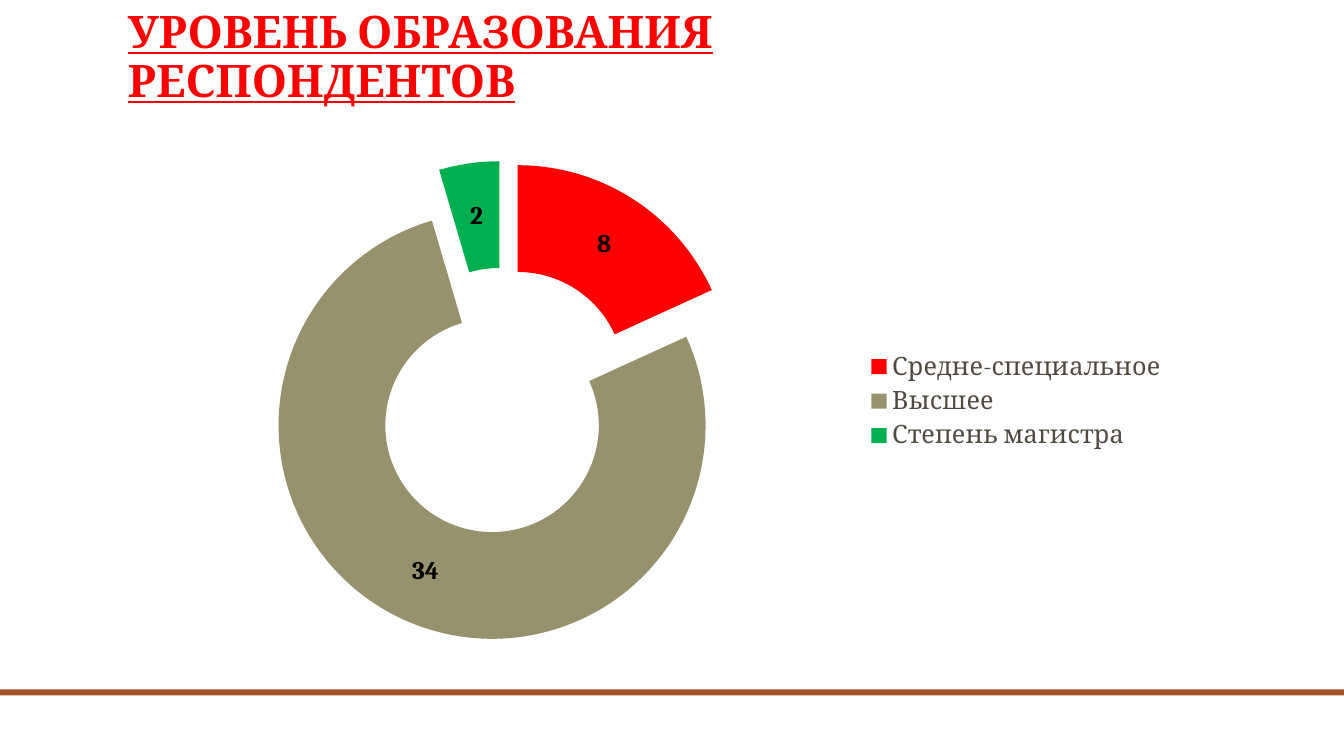
from dataclasses import dataclass

import pptx
import pptx.chart.data
import pptx.dml.color
import pptx.enum.chart
import pptx.enum.shapes
import pptx.enum.text
import pptx.util

Inches = pptx.util.Inches
Pt = pptx.util.Pt
FACE = "Cambria"


@dataclass
class Level:
    name: str
    count: int
    color: str


LEVELS = [
    Level("Средне-специальное", 8, "FF0000"),
    Level("Высшее", 34, "98916E"),
    Level("Степень магистра", 2, "00B050"),
]


def paint(target, color: str) -> None:
    """Give a fill or a font a solid colour."""
    if hasattr(target, "solid"):
        target.solid()
        target.fore_color.rgb = pptx.dml.color.RGBColor.from_string(color)
    else:
        target.color.rgb = pptx.dml.color.RGBColor.from_string(color)


def style(font, size: float, color: str, bold: bool = False) -> None:
    font.name = FACE
    font.size = Pt(size)
    font.bold = bold
    paint(font, color)


def add_band(slide) -> None:
    band = slide.shapes.add_shape(
        pptx.enum.shapes.MSO_SHAPE.RECTANGLE,
        Inches(0), Inches(6.84), Inches(13.33), Inches(0.06))
    band.shadow.inherit = False
    paint(band.fill, "A85229")
    band.line.fill.background()


def add_title(slide, text: str) -> None:
    box = slide.shapes.add_textbox(
        Inches(1.17), Inches(0.43), Inches(9.1), Inches(0.68))
    frame = box.text_frame
    frame.word_wrap = True
    frame.vertical_anchor = pptx.enum.text.MSO_ANCHOR.BOTTOM
    para = frame.paragraphs[0]
    para.line_spacing = 0.9
    run = para.add_run()
    run.text = text
    style(run.font, 32, "FF0000", bold=True)
    run.font.underline = True


def add_ring(slide, levels: list[Level]) -> None:
    data = pptx.chart.data.CategoryChartData()
    data.categories = [level.name for level in levels]
    data.add_series("Series 1", [level.count for level in levels])
    chart = slide.shapes.add_chart(
        pptx.enum.chart.XL_CHART_TYPE.DOUGHNUT_EXPLODED,
        Inches(1.42), Inches(1.46), Inches(10.26), Inches(5.04), data).chart
    style(chart.font, 18, "514A40")
    chart.has_title = False
    chart.has_legend = True
    chart.legend.position = pptx.enum.chart.XL_LEGEND_POSITION.RIGHT
    chart.legend.include_in_layout = False
    style(chart.legend.font, 18, "514A40")

    plot = chart.plots[0]
    plot.vary_by_categories = True
    ring = plot.series[0]
    for index, level in enumerate(levels):
        paint(ring.points[index].format.fill, level.color)
    labels = ring.data_labels
    labels.show_value = True
    labels.show_percentage = False
    style(labels.font, 18, "000000", bold=True)


def main() -> None:
    deck = pptx.Presentation()
    deck.slide_width = Inches(13.33)
    deck.slide_height = Inches(7.5)
    slide = deck.slides.add_slide(deck.slide_layouts[6])
    add_band(slide)
    add_title(slide, "УРОВЕНЬ ОБРАЗОВАНИЯ РЕСПОНДЕНТОВ")
    add_ring(slide, LEVELS)
    deck.save("out.pptx")


if __name__ == "__main__":
    main()
